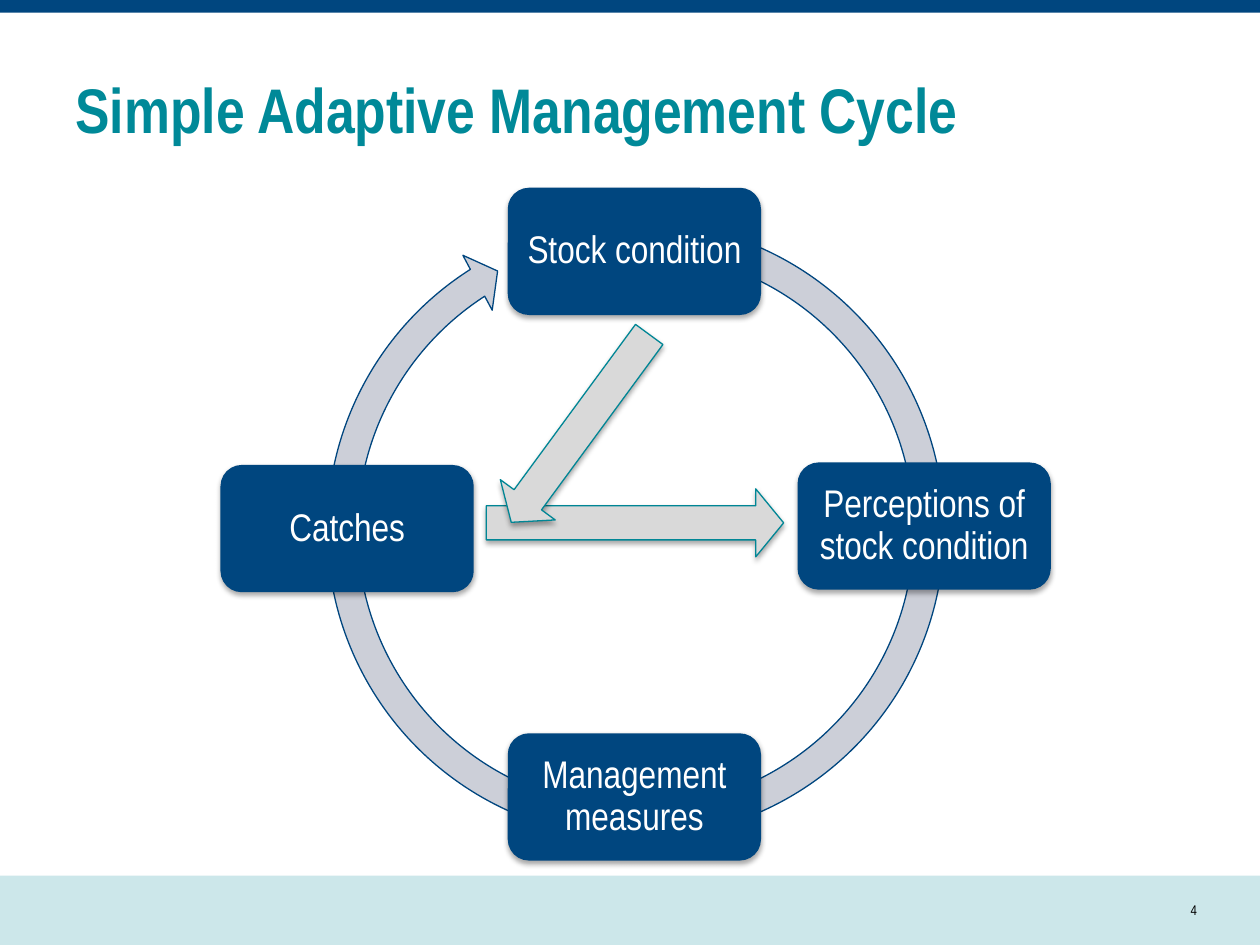
"""Build the adaptive management cycle slide."""
from lxml.etree import SubElement
from pptx import Presentation
from pptx.dml.color import RGBColor
from pptx.enum.shapes import MSO_SHAPE as Shape
from pptx.enum.text import MSO_ANCHOR as Anchor, PP_ALIGN as Align
from pptx.oxml.ns import qn
from pptx.util import Inches, Pt

NAVY = RGBColor(0x00, 0x46, 0x7F)
TEAL = RGBColor(0x00, 0x89, 0x98)
ARROW_LINE = RGBColor(0x00, 0x86, 0x95)
PALE_TEAL = RGBColor(0xCC, 0xE7, 0xEA)
RING_GREY = RGBColor(0xCC, 0xCF, 0xD8)
ARROW_GREY = RGBColor(0xD9, 0xD9, 0xD9)
WHITE = RGBColor(0xFF, 0xFF, 0xFF)
BLACK = RGBColor(0x00, 0x00, 0x00)

FONT = "Arial Narrow"
TITLE = "Simple Adaptive Management Cycle"
PAGE_NUMBER = "4"
BANDS = [((0, 6.95, 10, 0.55), PALE_TEAL), ((0, 0, 10, 0.1), NAVY)]
RING_BOX = (2.47, 1.63, 5.15, 5.15)
RING_ADJUSTMENTS = (0.0467, 2.729, 142.425, 171.419, 0.048)
STAGE_SIZE = (2.01, 1.01)
STAGES = [
    ("Stock condition", (4.03, 1.49)),
    ("Perceptions of stock condition", (6.33, 3.67)),
    ("Management measures", (4.03, 5.82)),
    ("Catches", (1.75, 3.69)),
]
ARROWS = [((3.86, 3.88, 2.36, 0.54), 0), ((3.68, 3.13, 1.85, 0.54), 126.3)]


def add_shadow(shape):
    effects = shape._element.spPr.find(qn("a:effectLst"))
    shadow = SubElement(effects, qn("a:outerShdw"), blurRad=str(Pt(3.1)),
                        dist=str(Pt(1.8)), dir="5400000", rotWithShape="0")
    color = SubElement(shadow, qn("a:srgbClr"), val="000000")
    SubElement(color, qn("a:alpha"), val="35000")


def add_figure(slide, kind, box, fill, line=None, adjustments=(), shadow=False):
    shape = slide.shapes.add_shape(kind, *map(Inches, box))
    shape.shadow.inherit = False
    shape.fill.solid()
    shape.fill.fore_color.rgb = fill
    if line is None:
        shape.line.fill.background()
    else:
        shape.line.color.rgb = line
        shape.line.width = Pt(0.75)
    for index, value in enumerate(adjustments):
        shape.adjustments[index] = value
    if shadow:
        add_shadow(shape)
    return shape


def write_text(shape, text, size, color, align, margins, bold=False, spacing=1.0):
    frame = shape.text_frame
    frame.word_wrap = True
    frame.vertical_anchor = Anchor.MIDDLE
    frame.margin_left = frame.margin_right = Inches(margins[0])
    frame.margin_top = frame.margin_bottom = Inches(margins[1])
    paragraph = frame.paragraphs[0]
    paragraph.alignment = align
    paragraph.line_spacing = spacing
    run = paragraph.add_run()
    run.text = text
    run.font.name = FONT
    run.font.size = Pt(size)
    run.font.bold = bold
    run.font.color.rgb = color


def main():
    presentation = Presentation()
    presentation.slide_width, presentation.slide_height = Inches(10), Inches(7.5)
    slide = presentation.slides.add_slide(presentation.slide_layouts[5])

    for box, fill in BANDS:
        add_figure(slide, Shape.RECTANGLE, box, fill)

    title = slide.shapes.title
    title.left, title.top, title.width, title.height = map(Inches, (0.5, 0.49, 9, 0.74))
    write_text(title, TITLE, 36, TEAL, Align.LEFT, (0.1, 0.05), bold=True)

    number = slide.shapes.add_textbox(*map(Inches, (2.5, 6.95, 7, 0.55)))
    write_text(number, PAGE_NUMBER, 8, BLACK, Align.RIGHT, (0, 0.05))

    add_figure(slide, Shape.CIRCULAR_ARROW, RING_BOX, RING_GREY, NAVY, RING_ADJUSTMENTS)

    for label, corner in STAGES:
        stage = add_figure(slide, Shape.ROUNDED_RECTANGLE, corner + STAGE_SIZE, NAVY,
                           shadow=True)
        write_text(stage, label, 22, WHITE, Align.CENTER, (0.09, 0.09), spacing=0.9)

    for box, rotation in ARROWS:
        arrow = add_figure(slide, Shape.RIGHT_ARROW, box, ARROW_GREY, ARROW_LINE,
                           (0.5, 0.41), shadow=True)
        arrow.rotation = rotation

    presentation.save("out.pptx")


if __name__ == "__main__":
    main()
